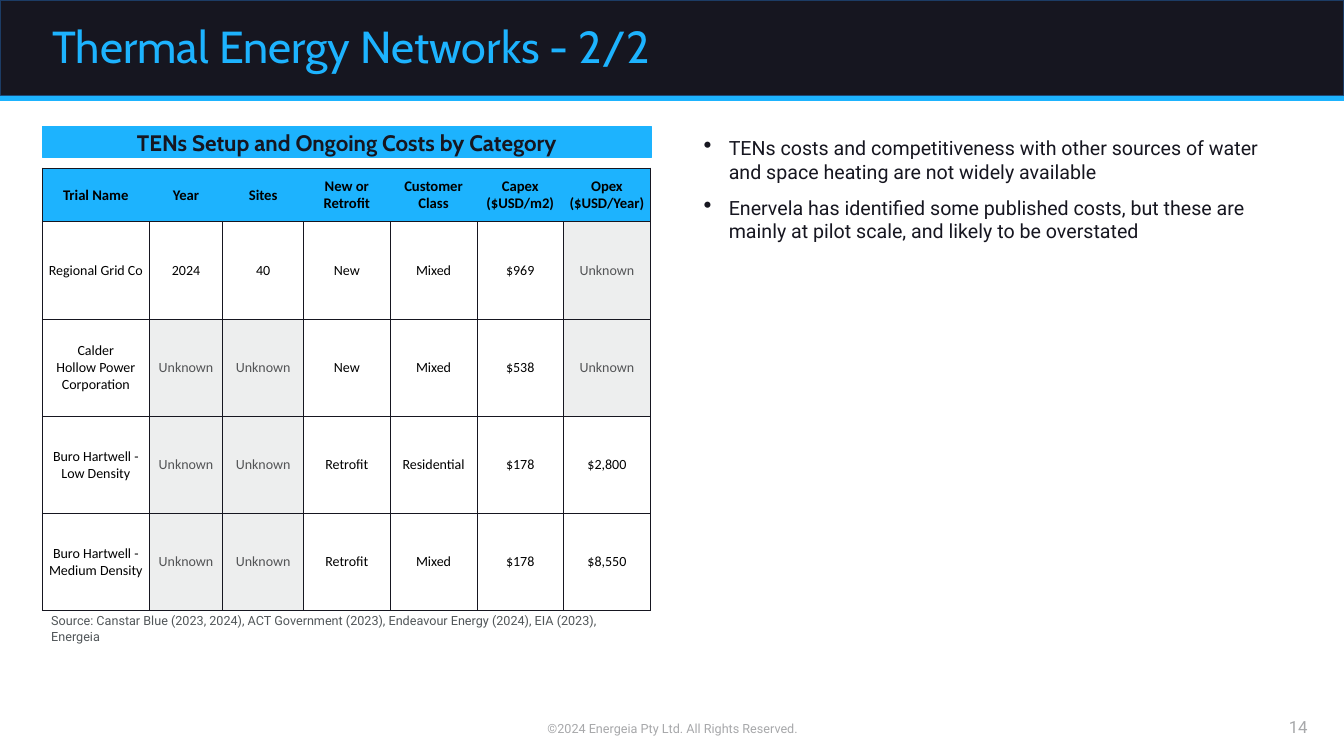
from lxml import etree
from pptx import Presentation
from pptx.dml.color import RGBColor
from pptx.enum.shapes import MSO_SHAPE
from pptx.enum.text import MSO_ANCHOR, PP_ALIGN
from pptx.oxml.ns import qn
from pptx.util import Inches, Pt

RECTANGLE = MSO_SHAPE.RECTANGLE
MIDDLE, TOP, BOTTOM = MSO_ANCHOR.MIDDLE, MSO_ANCHOR.TOP, MSO_ANCHOR.BOTTOM
LEFT, CENTER, RIGHT = PP_ALIGN.LEFT, PP_ALIGN.CENTER, PP_ALIGN.RIGHT

COLORS = {
    "ink": "161620",
    "sky": "1DB3FE",
    "navy": "1C3C65",
    "black": "000000",
    "unknown_text": "535456",
    "unknown_fill": "EDEEEE",
    "source": "515659",
    "footer": "A7A8AA",
}

COLUMN_WIDTHS = [1.06, 0.73, 0.8] + [0.86] * 4
TABLE_HEIGHT = 4.39
HEADER_HEIGHT = 0.53
TRIALS = [
    ["Trial Name", "Year", "Sites", "New or\vRetrofit", "Customer Class",
     "Capex ($USD/m2)", "Opex ($USD/Year)"],
    ["Regional Grid Co", "2024", "40", "New", "Mixed", "$969", "Unknown"],
    ["Calder\vHollow Power Corporation", "Unknown", "Unknown", "New", "Mixed",
     "$538", "Unknown"],
    ["Buro Hartwell - Low Density", "Unknown", "Unknown", "Retrofit",
     "Residential", "$178", "$2,800"],
    ["Buro Hartwell - Medium Density", "Unknown", "Unknown", "Retrofit",
     "Mixed", "$178", "$8,550"],
]
FINDINGS = [
    "TENs costs and competitiveness with other sources of water and space "
    "heating are not widely available",
    "Enervela has identified some published costs, but these are mainly at "
    "pilot scale, and likely to be overstated",
]


def color(name):
    return RGBColor.from_string(COLORS[name])


def style_font(para, name, size, ink, bold=False):
    para.font.name = name
    para.font.size = Pt(size)
    para.font.bold = bold
    para.font.color.rgb = color(ink)


def add_bar(page, area, fill, line=None, width=1):
    bar = page.shapes.add_shape(RECTANGLE, *map(Inches, area))
    bar.shadow.inherit = False
    bar.fill.solid()
    bar.fill.fore_color.rgb = color(fill)
    if line:
        bar.line.color.rgb = color(line)
        bar.line.width = Pt(width)
    else:
        bar.line.fill.background()
    return bar


def set_frame(box, anchor, side=0.1, edge=0.1):
    frame = box.text_frame
    frame.word_wrap = True
    frame.vertical_anchor = anchor
    frame.margin_left = frame.margin_right = Inches(side)
    frame.margin_top = frame.margin_bottom = Inches(edge)
    return frame


def write_line(box, text, font, size, ink, align=LEFT, anchor=MIDDLE,
               side=0.1, edge=0.1, bold=False):
    para = set_frame(box, anchor, side, edge).paragraphs[0]
    para.text = text
    para.alignment = align
    style_font(para, font, size, ink, bold)
    return para


def add_text(page, area):
    return page.shapes.add_textbox(*map(Inches, area))


def add_bullets(page, area, items):
    frame = set_frame(add_text(page, area), TOP)
    for index, item in enumerate(items):
        para = frame.add_paragraph() if index else frame.paragraphs[0]
        para.text = item
        properties = para._p.get_or_add_pPr()
        properties.set("marL", str(Inches(0.25)))
        properties.set("indent", str(Inches(-0.25)))
        etree.SubElement(properties, qn("a:buSzPct")).set("val", "120000")
        etree.SubElement(properties, qn("a:buChar")).set("char", "•")
        para.space_after = Pt(3)
        if index:
            para.space_before = Pt(6)
        style_font(para, "Roboto", 14, "ink")


def set_borders(cell, widths):
    properties = cell._tc.get_or_add_tcPr()
    for side, width in zip("LRTB", widths):
        border = etree.SubElement(properties, qn(f"a:ln{side}"))
        border.set("w", str(Pt(width)))
        if width:
            fill = etree.SubElement(border, qn("a:solidFill"))
            etree.SubElement(fill, qn("a:srgbClr")).set("val", COLORS["ink"])
        else:
            etree.SubElement(border, qn("a:noFill"))


def fill_cell(cell, text, header, borders):
    unknown = text == "Unknown"
    cell.vertical_anchor = MIDDLE
    cell.margin_left = cell.margin_right = 0
    cell.margin_top = cell.margin_bottom = 0
    para = cell.text_frame.paragraphs[0]
    para.text = text
    para.alignment = CENTER
    style_font(para, "Calibri", 10.5 if header else 10,
               "unknown_text" if unknown else "black", header)
    set_borders(cell, borders)
    if header or unknown:
        cell.fill.solid()
        cell.fill.fore_color.rgb = color("sky" if header else "unknown_fill")
    else:
        cell.fill.background()


def add_cost_table(page, left, top):
    last_row, last_column = len(TRIALS) - 1, len(COLUMN_WIDTHS) - 1
    table = page.shapes.add_table(
        len(TRIALS), len(COLUMN_WIDTHS), Inches(left), Inches(top),
        Inches(sum(COLUMN_WIDTHS)), Inches(TABLE_HEIGHT)).table
    table.first_row = table.horz_banding = False
    for column, width in zip(table.columns, COLUMN_WIDTHS):
        column.width = Inches(width)
    for row_index, values in enumerate(TRIALS):
        header = row_index == 0
        table.rows[row_index].height = Inches(
            HEADER_HEIGHT if header else (TABLE_HEIGHT - HEADER_HEIGHT) / last_row)
        inner = 0 if header else 0.5
        for column_index, text in enumerate(values):
            borders = (
                1 if column_index == 0 else inner,
                1 if column_index == last_column else inner,
                1 if row_index <= 1 else 0.5,
                1 if row_index in (0, last_row) else 0.5,
            )
            fill_cell(table.cell(row_index, column_index), text, header, borders)


def main():
    deck = Presentation()
    deck.slide_width, deck.slide_height = Inches(13.33), Inches(7.5)
    page = deck.slides.add_slide(deck.slide_layouts[6])

    add_bar(page, (0, 0, 13.33, 0.95), "ink", "navy")
    add_bar(page, (0, 0.95, 13.33, 0.05), "sky")
    title = write_line(add_text(page, (0.42, 0.14, 12.55, 0.7)),
                       "Thermal Energy Networks - 2/2", "Cabin", 32, "sky")
    title.line_spacing = 0.9

    write_line(add_bar(page, (0.42, 1.26, 6.04, 0.3), "sky", "sky", 0.75),
               "TENs Setup and Ongoing Costs by Category", "Cabin", 16, "ink",
               CENTER, bold=True)
    add_cost_table(page, 0.42, 1.67)
    write_line(add_text(page, (0.41, 6.11, 6.04, 0.25)),
               "Source: Canstar Blue (2023, 2024), ACT Government (2023), "
               "Endeavour Energy (2024), EIA (2023), Energeia",
               "Roboto", 9, "source")
    add_bullets(page, (6.88, 1.25, 6.04, 5.57), FINDINGS)

    write_line(add_text(page, (4.42, 7.09, 4.5, 0.26)),
               "©2024 Energeia Pty Ltd. All Rights Reserved.",
               "Roboto", 9, "footer", CENTER, BOTTOM, 0, 0.05)
    write_line(add_text(page, (9.97, 7.1, 3, 0.26)), "14",
               "Roboto", 12, "footer", RIGHT, BOTTOM, 0, 0.05)
    deck.save("out.pptx")


if __name__ == "__main__":
    main()
